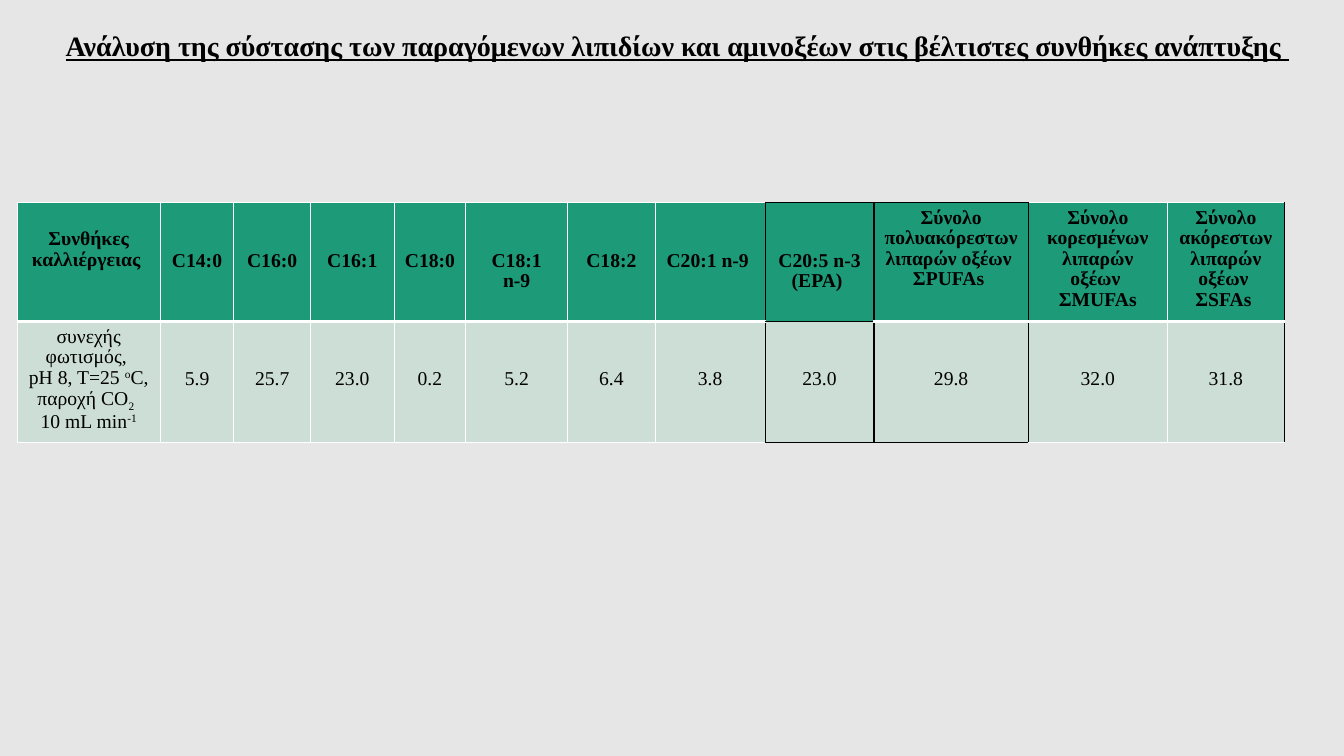
from lxml.etree import SubElement
from pptx import Presentation
from pptx.dml.color import RGBColor
from pptx.enum.text import MSO_ANCHOR, MSO_AUTO_SIZE, PP_ALIGN
from pptx.oxml.ns import qn
from pptx.util import Inches, Pt

COLORS = {"background": "E7E6E6", "header": "1D9A78", "body": "CDDED6",
          "text": "000000", "dark": "000000", "light": "FFFFFF"}
FONT = "Times New Roman"
LINE_HEIGHT = 0.213
CELL_MARGIN = 0.05
COLUMN_WIDTHS = [1.42, 0.73, 0.76, 0.83, 0.71, 1.01, 0.87, 1.09, 1.08, 1.53, 1.38, 1.16]
ROW_HEIGHTS = [1.18, 1.2]
DARK_EDGES = {"lnL": {8, 9, 10}, "lnR": {7, 8, 9, 11}}
FRAMED_COLUMNS = {8, 9}
EPA_COLUMN = 8

TITLE = "Ανάλυση της σύστασης των παραγόμενων λιπιδίων και αμινοξέων στις βέλτιστες συνθήκες ανάπτυξης "
HEADERS = [
    (1, ["Συνθήκες καλλιέργειας "]),
    (2, ["C14:0"]), (2, ["C16:0"]), (2, ["C16:1"]), (2, ["C18:0"]),
    (2, ["C18:1 n-9"]), (2, ["C18:2"]), (2, ["C20:1 n-9 "]),
    (2, ["C20:5 n-3", "(ΕPA) "]),
    (0, ["Σύνολο πολυακόρεστων λιπαρών οξέων ", "ΣPUFAs "]),
    (0, ["Σύνολο κορεσμένων λιπαρών οξέων ", "ΣMUFAs"]),
    (0, ["Σύνολο ακόρεστων λιπαρών οξέων ", "ΣSFAs "]),
]
CONDITIONS = [
    "συνεχής φωτισμός, ",
    [("pH 8, T=25 ", 0), ("o", 30), ("C,", 0)],
    [("παροχή CO", 0), ("2  ", -25)],
    [("10 mL min", 0), ("-1", 30)],
]
SHARES = ["5.9", "25.7", "23.0", "0.2", "5.2", "6.4", "3.8", "23.0", "29.8", "32.0", "31.8"]
VALUES = [(0, CONDITIONS)] + [(2, [share]) for share in SHARES]


def color(name):
    return RGBColor.from_string(COLORS[name])


def write_text(text_frame, paragraphs, size=14, bold=False, underline=False,
               align=PP_ALIGN.CENTER, spacing=0.95):
    text_frame.word_wrap = True
    for index, content in enumerate(paragraphs):
        paragraph = text_frame.paragraphs[0] if index == 0 else text_frame.add_paragraph()
        paragraph.alignment = align
        paragraph.line_spacing = spacing
        for text, baseline in [(content, 0)] if isinstance(content, str) else content:
            run = paragraph.add_run()
            run.text = text
            font = run.font
            font.name, font.size, font.bold, font.underline = FONT, Pt(size), bold, underline
            font.color.rgb = color("text")
            if baseline:
                run._r.get_or_add_rPr().set("baseline", str(baseline * 1000))


def draw_borders(cell, row, column):
    properties = cell._tc.get_or_add_tcPr()
    is_header = row == 0
    dark = {edge: column in columns for edge, columns in DARK_EDGES.items()}
    dark["lnT"] = (is_header and column in FRAMED_COLUMNS) or column == EPA_COLUMN
    dark["lnB"] = column == EPA_COLUMN or (not is_header and column in FRAMED_COLUMNS)
    for edge in ("lnL", "lnR", "lnT", "lnB"):
        thick = is_header and edge == "lnB" and not dark[edge]
        line = SubElement(properties, qn(f"a:{edge}"), w=str(Pt(3 if thick else 1)))
        fill = SubElement(line, qn("a:solidFill"))
        SubElement(fill, qn("a:srgbClr"), val=COLORS["dark" if dark[edge] else "light"])


def fill_row(table, row, entries, fill, bold):
    for column, (lines_above, paragraphs) in enumerate(entries):
        cell = table.cell(row, column)
        draw_borders(cell, row, column)
        cell.fill.solid()
        cell.fill.fore_color.rgb = color(fill)
        cell.margin_top = Inches(CELL_MARGIN + lines_above * LINE_HEIGHT)
        cell.margin_bottom = Inches(CELL_MARGIN)
        write_text(cell.text_frame, paragraphs, bold=bold)


def add_title(slide, left, top, width, height):
    title = slide.shapes.title
    title.left, title.top = Inches(left), Inches(top)
    title.width, title.height = Inches(width), Inches(height)
    title.text_frame.auto_size = MSO_AUTO_SIZE.NONE
    title.text_frame.vertical_anchor = MSO_ANCHOR.MIDDLE
    write_text(title.text_frame, [TITLE], size=20, bold=True, underline=True,
               align=PP_ALIGN.LEFT, spacing=0.9)


def add_composition_table(slide, left, top):
    frame = slide.shapes.add_table(
        len(ROW_HEIGHTS), len(COLUMN_WIDTHS), Inches(left), Inches(top),
        Inches(sum(COLUMN_WIDTHS)), Inches(sum(ROW_HEIGHTS)))
    table = frame.table
    for column, width in zip(table.columns, COLUMN_WIDTHS):
        column.width = Inches(width)
    for row, height in zip(table.rows, ROW_HEIGHTS):
        row.height = Inches(height)
    fill_row(table, 0, HEADERS, "header", bold=True)
    fill_row(table, 1, VALUES, "body", bold=False)


def main():
    presentation = Presentation()
    presentation.slide_width, presentation.slide_height = Inches(13.33), Inches(7.5)
    slide = presentation.slides.add_slide(presentation.slide_layouts[5])
    slide.background.fill.solid()
    slide.background.fill.fore_color.rgb = color("background")
    add_title(slide, 0.55, 0.25, 12.43, 0.45)
    add_composition_table(slide, 0.17, 2.01)
    presentation.save("out.pptx")


if __name__ == "__main__":
    main()
